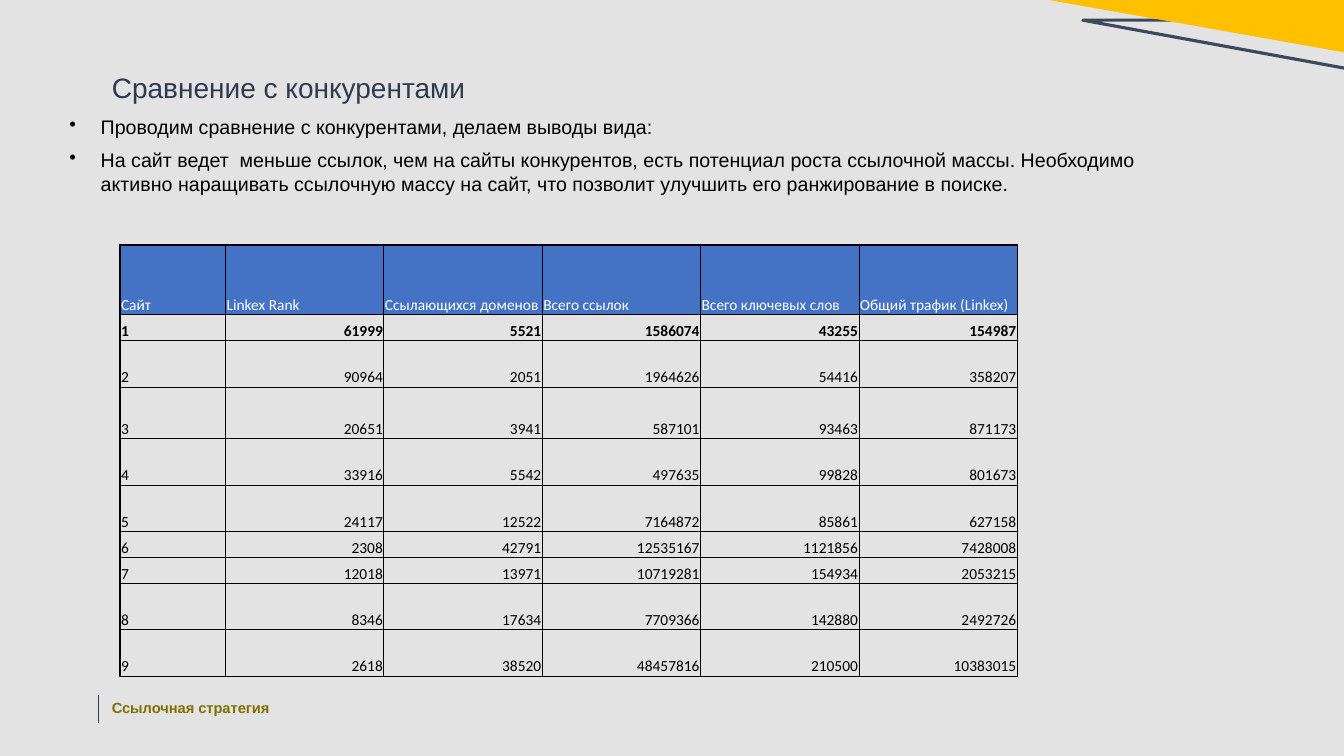
from lxml import etree
from pptx import Presentation
from pptx import util as u
from pptx.dml.color import RGBColor
from pptx.enum import shapes, text
from pptx.oxml.ns import qn

WIDE, HIGH = u.Inches(13.33), u.Inches(7.5)
BLACK, NAVY = "000000", "2F3A4F"

HEAD = ["Сайт", "Linkex Rank", "Ссылающихся доменов", "Всего ссылок",
        "Всего ключевых слов", "Общий трафик (Linkex)"]
SITES = [
    [1, 61999, 5521, 1586074, 43255, 154987],
    [2, 90964, 2051, 1964626, 54416, 358207],
    [3, 20651, 3941, 587101, 93463, 871173],
    [4, 33916, 5542, 497635, 99828, 801673],
    [5, 24117, 12522, 7164872, 85861, 627158],
    [6, 2308, 42791, 12535167, 1121856, 7428008],
    [7, 12018, 13971, 10719281, 154934, 2053215],
    [8, 8346, 17634, 7709366, 142880, 2492726],
    [9, 2618, 38520, 48457816, 210500, 10383015],
]
COLS = [2, 3, 3, 3, 3, 3]
ROWS = [27, 10, 18, 20, 18, 18, 10, 10, 18, 18]


def share(left, top, width, height):
    """Turn percentages of the slide into a box."""
    return [int(part * side / 100) for part, side in
            zip((left, top, width, height), (WIDE, HIGH, WIDE, HIGH))]


def tint(hue):
    return RGBColor.from_string(hue)


def paint(fill, hue):
    fill.solid()
    fill.fore_color.rgb = tint(hue)


def style(para, size, hue, name="Arial", bold=False):
    font = para.font
    font.size, font.name, font.bold = u.Pt(size), name, bold
    font.color.rgb = tint(hue)


def veil(slide, box):
    """Half-clear grey sheet over the background."""
    sheet = slide.shapes.add_shape(shapes.MSO_SHAPE.RECTANGLE, *box)
    sheet.shadow.inherit = False
    sheet.line.fill.background()
    paint(sheet.fill, "DDDDDD")
    hue = sheet.fill._xPr.find(".//" + qn("a:srgbClr"))
    etree.SubElement(hue, qn("a:alpha"), val="50000")


def wedge(slide, box, fill=None, line=None):
    """Corner triangle that fills the box once turned."""
    left, top, width, height = box
    shift = (width - height) // 2
    shape = slide.shapes.add_shape(shapes.MSO_SHAPE.ISOSCELES_TRIANGLE,
                                   left + shift, top - shift, height, width)
    shape.shadow.inherit = False
    shape.adjustments[0] = 0
    shape.rotation = 270
    shape._element.spPr.find(qn("a:xfrm")).set("flipH", "1")
    if fill:
        paint(shape.fill, fill)
    else:
        shape.fill.background()
    if line:
        paint(shape.line.fill, line)
        shape.line.width = u.Pt(2.25)
    else:
        shape.line.fill.background()


def rule(slide, box):
    left, top, width, height = box
    line = slide.shapes.add_connector(shapes.MSO_CONNECTOR.STRAIGHT, left, top,
                                      left + width, top + height)
    etree.SubElement(line._element.spPr, qn("a:effectLst"))
    paint(line.line.fill, NAVY)
    line.line.width = u.Pt(0.75)


def frame(slide, box):
    body = slide.shapes.add_textbox(*box).text_frame
    body.word_wrap = True
    return body


def label(slide, box, words, size, hue, bold=False):
    body = frame(slide, box)
    body.vertical_anchor = text.MSO_ANCHOR.BOTTOM
    para = body.paragraphs[0]
    para.text = words
    para.line_spacing = 0.9
    style(para, size, hue, bold=bold)


def points(slide, box, lines):
    body = frame(slide, box)
    for num, words in enumerate(lines):
        para = body.add_paragraph() if num else body.paragraphs[0]
        para.text = words
        if num:
            para.space_before = u.Pt(7)
        props = para._p.get_or_add_pPr()
        props.set("marL", str(u.Inches(0.31)))
        props.set("indent", str(u.Inches(-0.31)))
        etree.SubElement(props, qn("a:buChar"), char="•")
        style(para, 14, BLACK)


def border(cell, thick):
    """Black lines; the sides named in thick lie on the table's edge."""
    props = cell._tc.get_or_add_tcPr()
    for side in "LRTB":
        width = u.Pt(1 if side in thick else 0.75)
        line = etree.SubElement(props, qn("a:ln" + side), w=str(width))
        fill = etree.SubElement(line, qn("a:solidFill"))
        etree.SubElement(fill, qn("a:srgbClr"), val=BLACK)


def rivals(slide, box):
    """Table of the competing sites."""
    left, top, width, height = box
    rows = [HEAD] + SITES
    table = slide.shapes.add_table(len(rows), len(HEAD), *box).table
    table.first_row = table.horz_banding = False
    for col, part in zip(table.columns, COLS):
        col.width = width * part // sum(COLS)
    for row, part in zip(table.rows, ROWS):
        row.height = height * part // sum(ROWS)
    for r, row in enumerate(rows):
        for c, value in enumerate(row):
            cell = table.cell(r, c)
            edges = {"T": r == 0, "B": r == len(rows) - 1,
                     "L": c == 0, "R": c == len(row) - 1}
            border(cell, [side for side in edges if edges[side]])
            cell.margin_left = cell.margin_right = cell.margin_top = u.Inches(0.01)
            cell.margin_bottom = 0
            cell.vertical_anchor = text.MSO_ANCHOR.BOTTOM
            para = cell.text_frame.paragraphs[0]
            para.text = str(value)
            if r and c:
                para.alignment = text.PP_ALIGN.RIGHT
            if r:
                cell.fill.background()
            else:
                paint(cell.fill, "4472C4")
            style(para, 11, BLACK if r else "FFFFFF", "Calibri", r == 1)


def main():
    deck = Presentation()
    deck.slide_width, deck.slide_height = WIDE, HIGH
    slide = deck.slides.add_slide(deck.slide_layouts[6])
    paint(slide.background.fill, "EAEAEA")
    veil(slide, share(0, 0, 100, 100))
    rule(slide, share(7.35, 91.87, 0, 3.73))
    wedge(slide, share(80.57, 2.67, 20.03, 6.53), line="3D485A")
    wedge(slide, share(77.64, -0.13, 22.43, 7.07), fill="FFC000")
    label(slide, share(7.58, 9.2, 86.27, 5.33), "Сравнение с конкурентами", 20, NAVY)
    points(slide, share(4.43, 14.53, 82.3, 15.2), [
        "Проводим сравнение с конкурентами, делаем выводы вида:",
        "На сайт ведет  меньше ссылок, чем на сайты конкурентов, есть потенциал "
        "роста ссылочной массы. Необходимо активно наращивать ссылочную массу на "
        "сайт, что позволит улучшить его ранжирование в поиске."])
    label(slide, share(7.58, 92, 15.98, 3.47), "Ссылочная стратегия", 10.5,
          "7F7100", True)
    rivals(slide, share(8.93, 32.4, 66.77, 57.07))
    deck.save("out.pptx")


if __name__ == "__main__":
    main()
